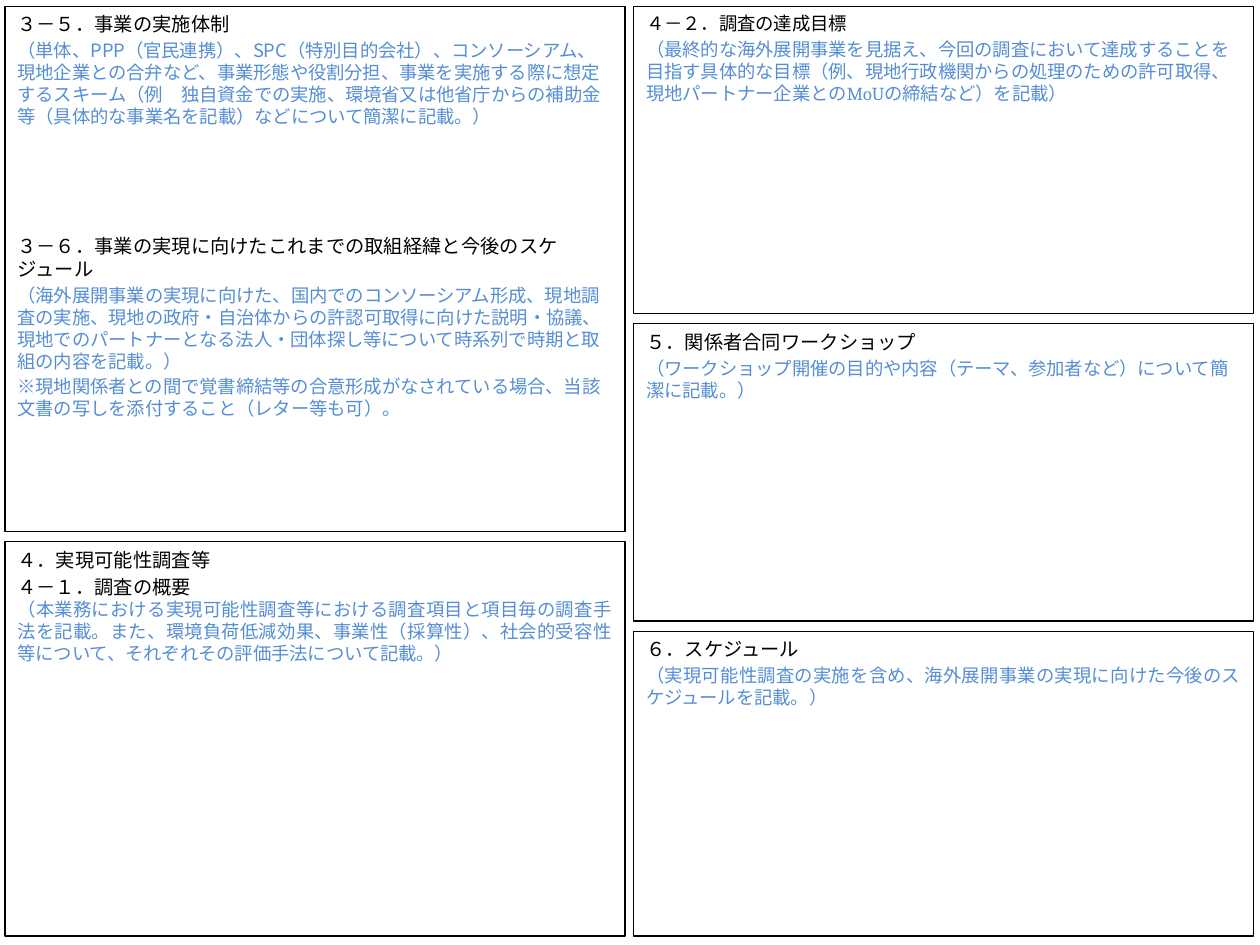
from lxml import etree
from pptx import Presentation
from pptx.dml.color import RGBColor
from pptx.enum.lang import MSO_LANGUAGE_ID as LANG
from pptx.enum.shapes import MSO_SHAPE as SHAPE
from pptx.enum.text import MSO_ANCHOR as ANCHOR, PP_ALIGN as ALIGN
from pptx.oxml.ns import qn
from pptx.util import Inches, Pt

COLORS = {"heading": "000000", "guide": "558ED5", "border": "000000"}
FONT = "Noto Sans CJK JP"
LEFT, RIGHT, WIDTH = 0.04, 5.03, 4.92


def add_text(tf, text, size=10.5, color="guide", font=FONT, before=2.1, align=ALIGN.LEFT):
    p = tf.paragraphs[0] if not tf.text else tf.add_paragraph()
    p.alignment = align
    p.space_before = Pt(before)
    p.line_spacing = Pt(size * 1.2)
    r = p.add_run()
    r.text = text
    r.font.size = Pt(size)
    r.font.name = font
    r.font.language_id = LANG.JAPANESE
    r.font.color.rgb = RGBColor.from_string(COLORS[color])
    etree.SubElement(r.font._element, qn("a:ea")).set("typeface", FONT)


def add_heading(tf, text, size=11, before=2.3, **fmt):
    add_text(tf, text, size=size, color="heading", before=before, **fmt)


def add_box(slide, x, y, w, h):
    sp = slide.shapes.add_shape(SHAPE.RECTANGLE, Inches(x), Inches(y), Inches(w), Inches(h))
    sp.shadow.inherit = False
    sp.fill.background()
    sp.line.color.rgb = RGBColor.from_string(COLORS["border"])
    sp.line.width = Pt(0.75)
    tf = sp.text_frame
    tf.word_wrap = True
    tf.vertical_anchor = ANCHOR.TOP
    return tf


def add_business(slide, *box):
    tf = add_box(slide, *box)
    add_heading(tf, "３－５．事業の実施体制")
    add_text(tf, "（単体、PPP（官民連携）、SPC（特別目的会社）、コンソーシアム、現地企業との合弁など、"
                 "事業形態や役割分担、事業を実施する際に想定するスキーム（例　独自資金での実施、"
                 "環境省又は他省庁からの補助金等（具体的な事業名を記載）などについて簡潔に記載。）")
    add_heading(tf, "３－６．事業の実現に向けたこれまでの取組経緯と今後のスケジュール", before=61)
    add_text(tf, "（海外展開事業の実現に向けた、国内でのコンソーシアム形成、現地調査の実施、"
                 "現地の政府・自治体からの許認可取得に向けた説明・協議、現地でのパートナーとなる"
                 "法人・団体探し等について時系列で時期と取組の内容を記載。）")
    add_text(tf, "※現地関係者との間で覚書締結等の合意形成がなされている場合、"
                 "当該文書の写しを添付すること（レター等も可）。", before=1.7)


def add_survey(slide, *box):
    tf = add_box(slide, *box)
    add_heading(tf, "４．実現可能性調査等")
    add_heading(tf, "４－１．調査の概要")
    add_text(tf, "（本業務における実現可能性調査等における調査項目と項目毎の調査手法を記載。"
                 "また、環境負荷低減効果、事業性（採算性）、社会的受容性等について、"
                 "それぞれその評価手法について記載。）", before=0, align=ALIGN.JUSTIFY)


def add_goals(slide, *box):
    tf = add_box(slide, *box)
    add_heading(tf, "４－２．調査の達成目標", size=10.5, font="Calibri")
    add_text(tf, "（最終的な海外展開事業を見据え、今回の調査において達成することを目指す具体的な目標"
                 "（例、現地行政機関からの処理のための許可取得、"
                 "現地パートナー企業とのMoUの締結など）を記載）", font="Cambria")


def add_workshop(slide, *box):
    tf = add_box(slide, *box)
    add_heading(tf, "５．関係者合同ワークショップ")
    add_text(tf, "（ワークショップ開催の目的や内容（テーマ、参加者など）について簡潔に記載。）")


def add_schedule(slide, *box):
    tf = add_box(slide, *box)
    add_heading(tf, "６．スケジュール")
    add_text(tf, "（実現可能性調査の実施を含め、海外展開事業の実現に向けた今後のスケジュールを記載。）",
             align=ALIGN.JUSTIFY)


def main():
    prs = Presentation()
    prs.slide_width, prs.slide_height = Inches(10), Inches(7.5)
    slide = prs.slides.add_slide(prs.slide_layouts[6])
    add_business(slide, LEFT, 0.05, WIDTH, 4.17)
    add_survey(slide, LEFT, 4.3, WIDTH, 3.13)
    add_goals(slide, RIGHT, 0.05, WIDTH, 2.44)
    add_workshop(slide, RIGHT, 2.57, WIDTH, 2.36)
    add_schedule(slide, RIGHT, 5.01, WIDTH, 2.42)
    prs.save("out.pptx")


if __name__ == "__main__":
    main()
